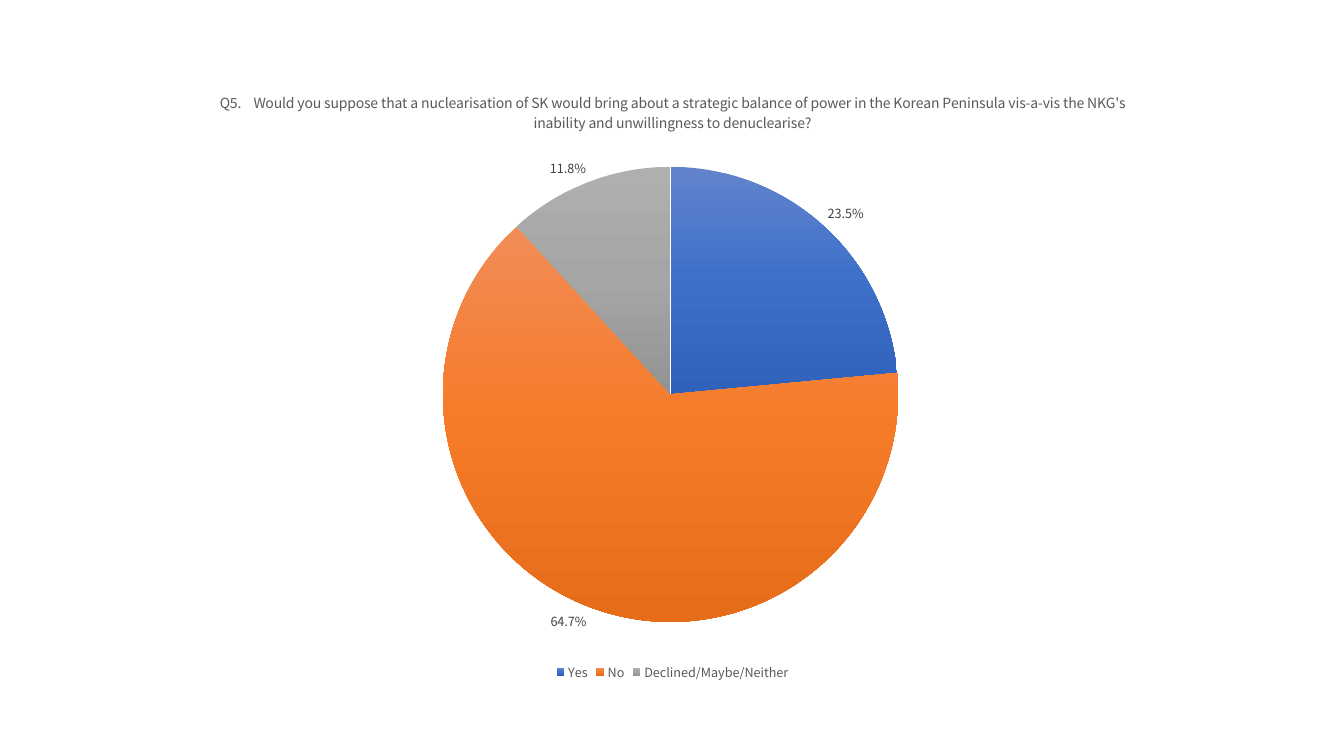
import copy

import pptx
import pptx.chart.data
import pptx.dml.color
import pptx.enum.chart
import pptx.util

EMU_PER_PX = 914400 / 100.8
FONT = "Noto Sans CJK KR"
QUESTION = (
    "Q5.    Would you suppose that a nuclearisation of SK would bring about "
    "a strategic balance of power in the Korean Peninsula vis-a-vis the NKG's "
    "inability and unwillingness to denuclearise?"
)
# answer, share, gradient from top to bottom
ANSWERS = [
    ("Yes", 0.235, ("6183CB", "3E70CA", "3062BB")),
    ("No", 0.647, ("F18C57", "F67B28", "E56C19")),
    ("Declined/Maybe/Neither", 0.118, ("AFAFAF", "A5A5A5", "939393")),
]


def px(length):
    return pptx.util.Emu(round(length * EMU_PER_PX))


def rgb(value):
    return pptx.dml.color.RGBColor.from_string(value)


def set_font(font, size, color):
    font.name = FONT
    font.size = pptx.util.Pt(size)
    font.bold = False
    font.color.rgb = rgb(color)


def add_pie(page, left, top, width, height):
    data = pptx.chart.data.CategoryChartData(number_format="0.0%")
    data.categories = [name for name, share, colors in ANSWERS]
    data.add_series(QUESTION, [share for name, share, colors in ANSWERS])
    frame = page.shapes.add_chart(
        pptx.enum.chart.XL_CHART_TYPE.PIE,
        px(left), px(top), px(width), px(height), data,
    )
    chart = frame.chart
    set_font(chart.font, 10, "000000")
    chart.plots[0].vary_by_categories = True
    return chart


def add_title(chart):
    chart.has_title = True
    chart.chart_title.include_in_layout = False
    para = chart.chart_title.text_frame.paragraphs[0]
    para.text = QUESTION
    set_font(para.font, 10, "595959")


def add_legend(chart):
    chart.has_legend = True
    chart.legend.position = pptx.enum.chart.XL_LEGEND_POSITION.BOTTOM
    chart.legend.include_in_layout = False
    set_font(chart.legend.font, 9, "595959")


def add_labels(chart):
    plot = chart.plots[0]
    plot.has_data_labels = True
    labels = plot.data_labels
    labels.show_value = True
    labels.show_percentage = False
    labels.number_format = "0.0%"
    labels.number_format_is_linked = False
    labels.position = pptx.enum.chart.XL_LABEL_POSITION.OUTSIDE_END
    set_font(labels.font, 9, "404040")


def fill_slices(chart):
    """Give each slice a vertical gradient of three evenly spaced stops."""
    points = chart.plots[0].series[0].points
    fills = [points[index].format.fill for index in range(len(ANSWERS))]
    for fill in fills:
        fill.gradient()
        fill.gradient_angle = 270
    for stop_list in chart.element.xpath(".//c:dPt//a:gsLst"):
        stop_list.append(copy.deepcopy(stop_list[-1]))
    for fill, (name, share, colors) in zip(fills, ANSWERS):
        for index, color in enumerate(colors):
            stop = fill.gradient_stops[index]
            stop.position = index / 2
            stop.color.rgb = rgb(color)


def main():
    deck = pptx.Presentation()
    deck.slide_width = px(1344)
    deck.slide_height = px(756)
    page = deck.slides.add_slide(deck.slide_layouts[6])
    chart = add_pie(page, 71, 71, 1203, 614)
    add_title(chart)
    add_legend(chart)
    add_labels(chart)
    fill_slices(chart)
    deck.save("out.pptx")


if __name__ == "__main__":
    main()
